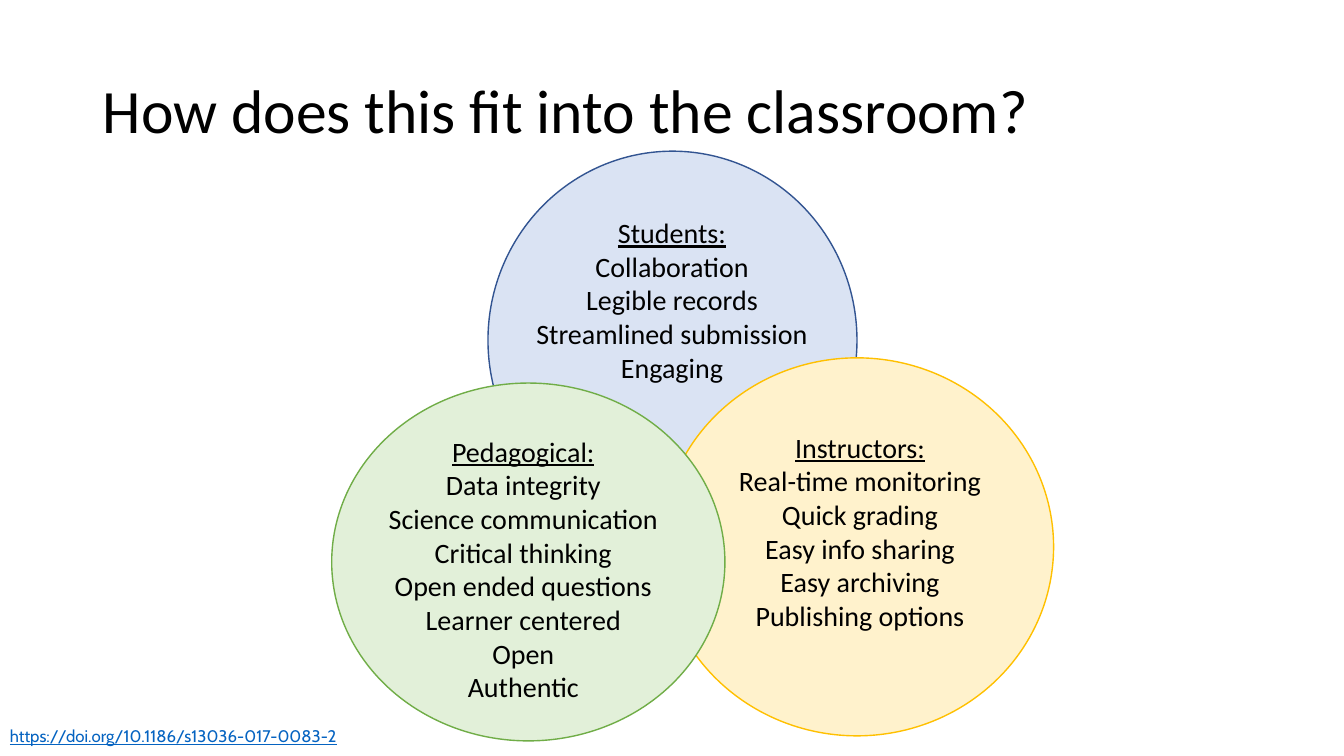
import pptx
import pptx.util
import pptx.dml.color
import pptx.enum.shapes
import pptx.enum.text

HUES = {
    "ink": "000000", "link": "0563C1",
    "blue": "DAE3F3", "navy": "325491",
    "cream": "FFF2CC", "gold": "FFC000",
    "mint": "E2F0D9", "green": "70AD47",
}
Inches = pptx.util.Inches
Pt = pptx.util.Pt
ALIGN = pptx.enum.text.PP_ALIGN
ANCHOR = pptx.enum.text.MSO_ANCHOR


def color(name):
    return pptx.dml.color.RGBColor.from_string(HUES[name])


def write(box, lines, size, align=ALIGN.LEFT, face="Calibri", hue="ink"):
    """Add a text box with one paragraph per line and return its frame."""
    frame = slide.shapes.add_textbox(*map(Inches, box)).text_frame
    frame.word_wrap = True
    for row, line in enumerate(lines):
        para = frame.add_paragraph() if row else frame.paragraphs[0]
        para.text = line
        para.alignment = align
        para.font.name = face
        para.font.size = Pt(size)
        para.font.color.rgb = color(hue)
    return frame


deck = pptx.Presentation()
deck.slide_width, deck.slide_height = Inches(13.33), Inches(7.5)
slide = deck.slides.add_slide(deck.slide_layouts[6])

title = write((0.92, 0.4, 11.5, 1.45), ["How does this fit into the classroom?"], 44)
title.vertical_anchor = ANCHOR.MIDDLE
title.paragraphs[0].line_spacing = 0.9

# Circle box, fill, line, text box, heading and items, from back to front
groups = [
    ((4.84, 1.5, 3.66, 3.75), "blue", "navy", (5.12, 2.09, 3.09, 1.78),
     ["Students:", "Collaboration", "Legible records",
      "Streamlined submission", "Engaging"]),
    ((6.55, 3.55, 3.9, 3.75), "cream", "gold", (6.3, 4.22, 4.46, 2.46),
     ["Instructors:", "Real-time monitoring", "Quick grading",
      "Easy info sharing", "Easy archiving", "Publishing options"]),
    ((3.29, 3.8, 3.9, 3.55), "mint", "green", (2.88, 4.26, 4.62, 3.13),
     ["Pedagogical:", "Data integrity", "Science communication",
      "Critical thinking", "Open ended questions", "Learner centered",
      "Open", "Authentic"]),
]
for place, fill, edge, _, _ in groups:
    disc = slide.shapes.add_shape(
        pptx.enum.shapes.MSO_SHAPE.OVAL, *map(Inches, place))
    disc.shadow.inherit = False
    disc.fill.solid()
    disc.fill.fore_color.rgb = color(fill)
    disc.line.color.rgb = color(edge)
    disc.line.width = Pt(1)

for _, _, _, box, lines in groups:
    frame = write(box, lines, 20, ALIGN.CENTER)
    frame.paragraphs[0].font.underline = True

cite = write((0, 7.15, 3.51, 0.3), ["https://doi.org/10.1186/s13036-017-0083-2"],
             12, face="Cabin", hue="link")
cite.word_wrap = False
cite.paragraphs[0].font.underline = True

deck.save("out.pptx")
